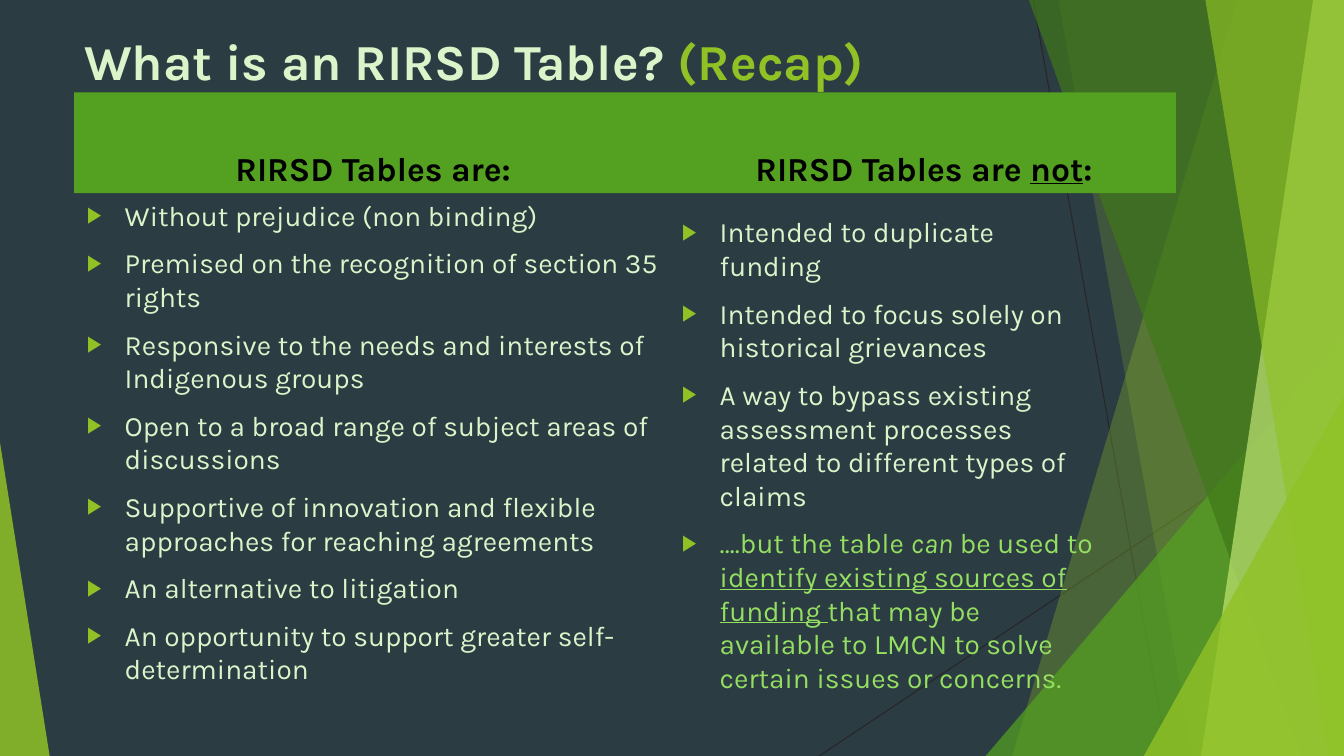
"""Build the slide on what RIRSD Tables are and are not."""
import pptx
import pptx.dml.color
import pptx.enum.shapes
import pptx.enum.text
import pptx.oxml
import pptx.oxml.ns
import pptx.util

Pt = pptx.util.Pt
RGB = pptx.dml.color.RGBColor
SHAPE = pptx.enum.shapes.MSO_SHAPE
ALIGN = pptx.enum.text.PP_ALIGN
ANCHOR = pptx.enum.text.MSO_ANCHOR

NIGHT = RGB(0x2C, 0x3C, 0x43)
LIME = RGB(0x90, 0xC2, 0x26)
GREEN = RGB(0x54, 0xA0, 0x21)
FOREST = RGB(0x3F, 0x78, 0x19)
PALE = RGB(0xC0, 0xE4, 0x74)
MINT = RGB(0xDB, 0xF4, 0xCA)
LEAF = RGB(0x94, 0xDE, 0x61)
BLACK = RGB(0, 0, 0)
DARK = RGB(0x26, 0x26, 0x26)
FONT = "Karla"

ARE = [
    [("Without prejudice (non binding)", MINT, "")],
    [("Premised on the recognition of section 35 rights", MINT, "")],
    [("Responsive to the needs and interests of Indigenous groups", MINT, "")],
    [("Open to a broad range of subject areas of discussions", MINT, "")],
    [("Supportive of innovation and flexible approaches for reaching agreements", MINT, "")],
    [("An alternative to litigation", MINT, "")],
    [("An opportunity to support greater self-determination", MINT, "")],
]
NOT = [
    [("Intended to duplicate funding", MINT, "")],
    [("Intended to focus solely on historical grievances", MINT, "")],
    [("A way to bypass existing assessment processes related to different types of claims",
      MINT, "")],
    [("….but the table ", LEAF, ""), ("can", LEAF, "i"), (" be used to ", LEAF, ""),
     ("identify existing sources of funding ", LEAF, "u"),
     ("that may be available to LMCN to solve certain issues or concerns.", LEAF, "")],
]


def make(tag, body=""):
    """Return a drawing element with the given content."""
    space = pptx.oxml.ns.nsdecls("a")
    return pptx.oxml.parse_xml(f"<a:{tag} {space}>{body}</a:{tag}>")


def paint(shape, color, alpha=100):
    """Fill a shape flat, with no line or shadow."""
    shape.shadow.inherit = False
    shape.line.fill.background()
    shape.fill.solid()
    shape.fill.fore_color.rgb = color
    if alpha < 100:
        tone = shape.fill._xPr.find(".//" + pptx.oxml.ns.qn("a:srgbClr"))
        tone.append(pptx.oxml.parse_xml(
            f'<a:alpha {pptx.oxml.ns.nsdecls("a")} val="{alpha * 1000}"/>'))


def write(para, runs, size, bold=False):
    """Add styled runs to a paragraph."""
    for text, color, style in runs:
        run = para.add_run()
        run.text = text
        font = run.font
        font.name, font.size, font.bold = FONT, Pt(size), bold
        font.color.rgb = color
        font.italic = "i" in style
        font.underline = "u" in style


def frame(slide, box):
    """Add a wrapping text box and return its frame."""
    text = slide.shapes.add_textbox(*map(Pt, box)).text_frame
    text.word_wrap = True
    return text


def thread(slide, start, end):
    """Draw one thin dark line."""
    line = slide.shapes.add_connector(
        pptx.enum.shapes.MSO_CONNECTOR.STRAIGHT, *map(Pt, start + end))
    line.line.color.rgb = DARK
    line.line.width = Pt(0.75)
    line._element.spPr.append(make("effectLst"))


def band(slide, box, top, foot, color, alpha):
    """Fill from a slanted edge to the right side of the box."""
    left, head, wide, high = box
    right, base = left + wide, head + high
    pen = slide.shapes.build_freeform(Pt(left + top), Pt(head))
    pen.add_line_segments([(Pt(right), Pt(head)), (Pt(right), Pt(base)),
                           (Pt(left + foot), Pt(base))])
    paint(pen.convert_to_shape(), color, alpha)


def wedge(slide, box, wide, high, peak, color, alpha):
    """Place a triangle in the lower left (peak 0) or right (peak 1) corner."""
    x = box[0] + peak * (box[2] - wide)
    y = box[1] + box[3] - high
    shape = slide.shapes.add_shape(
        SHAPE.ISOSCELES_TRIANGLE, Pt(x), Pt(y), Pt(wide), Pt(high))
    shape.adjustments[0] = peak
    paint(shape, color, alpha)


def facets(slide, box):
    """Draw the green facets along the sides of the box."""
    x, y, wide, high = box
    thread(slide, (x + 738, y), (x + 834, y + high))
    thread(slide, (x + wide, y + 290), (x + 585, y + high))
    band(slide, box, 884, 723, LIME, 30)
    band(slide, box, 756, 852, LIME, 20)
    wedge(slide, box, 256, 300, 1, GREEN, 72)
    band(slide, box, 735, 929.5, FOREST, 70)
    band(slide, box, 938, 858, PALE, 70)
    band(slide, box, 861, 949, LIME, 65)
    wedge(slide, box, 143, 257, 1, LIME, 80)
    wedge(slide, box, 35.5, 224, 0, LIME, 85)


def title(slide, box):
    """Write the two-tone title."""
    runs = [("What is an RIRSD Table? ", MINT, ""), ("(Recap)", LIME, "")]
    write(frame(slide, box).paragraphs[0], runs, 36, True)


def header(slide, box, runs):
    """Draw a green bar with a heading at its foot."""
    bar = slide.shapes.add_shape(SHAPE.RECTANGLE, *map(Pt, box))
    paint(bar, GREEN)
    text = bar.text_frame
    text.word_wrap = True
    text.vertical_anchor = ANCHOR.BOTTOM
    text.paragraphs[0].alignment = ALIGN.CENTER
    write(text.paragraphs[0], runs, 24, True)


def points(slide, box, items):
    """List items with arrow bullets."""
    text = frame(slide, box)
    for i, runs in enumerate(items):
        para = text.add_paragraph() if i else text.paragraphs[0]
        para.space_before = Pt(10)
        props = para._p.get_or_add_pPr()
        props.set("marL", str(Pt(27)))
        props.set("indent", str(-Pt(27)))
        props.append(make("buClr", f'<a:srgbClr val="{LIME}"/>'))
        for tag, key, value in (("buSzPct", "val", "80000"),
                                ("buFont", "typeface", "Arial"),
                                ("buChar", "char", "▶")):
            mark = make(tag)
            mark.set(key, value)
            props.append(mark)
        write(para, runs, 20)


def main():
    """Build and save the deck."""
    deck = pptx.Presentation()
    deck.slide_width, deck.slide_height = Pt(960), Pt(540)
    slide = deck.slides.add_slide(deck.slide_layouts[6])
    slide.background.fill.solid()
    slide.background.fill.fore_color.rgb = NIGHT
    facets(slide, (0, 0, 960, 540))
    title(slide, (53, 18, 677, 84))
    header(slide, (53, 66, 427, 72), [("RIRSD Tables are:", BLACK, "")])
    points(slide, (55, 138, 425, 348), ARE)
    header(slide, (480, 66, 360, 72),
           [("RIRSD Tables are ", BLACK, ""), ("not", BLACK, "u"), (":", BLACK, "")])
    points(slide, (480, 150, 312, 353), NOT)
    deck.save("out.pptx")


if __name__ == "__main__":
    main()
